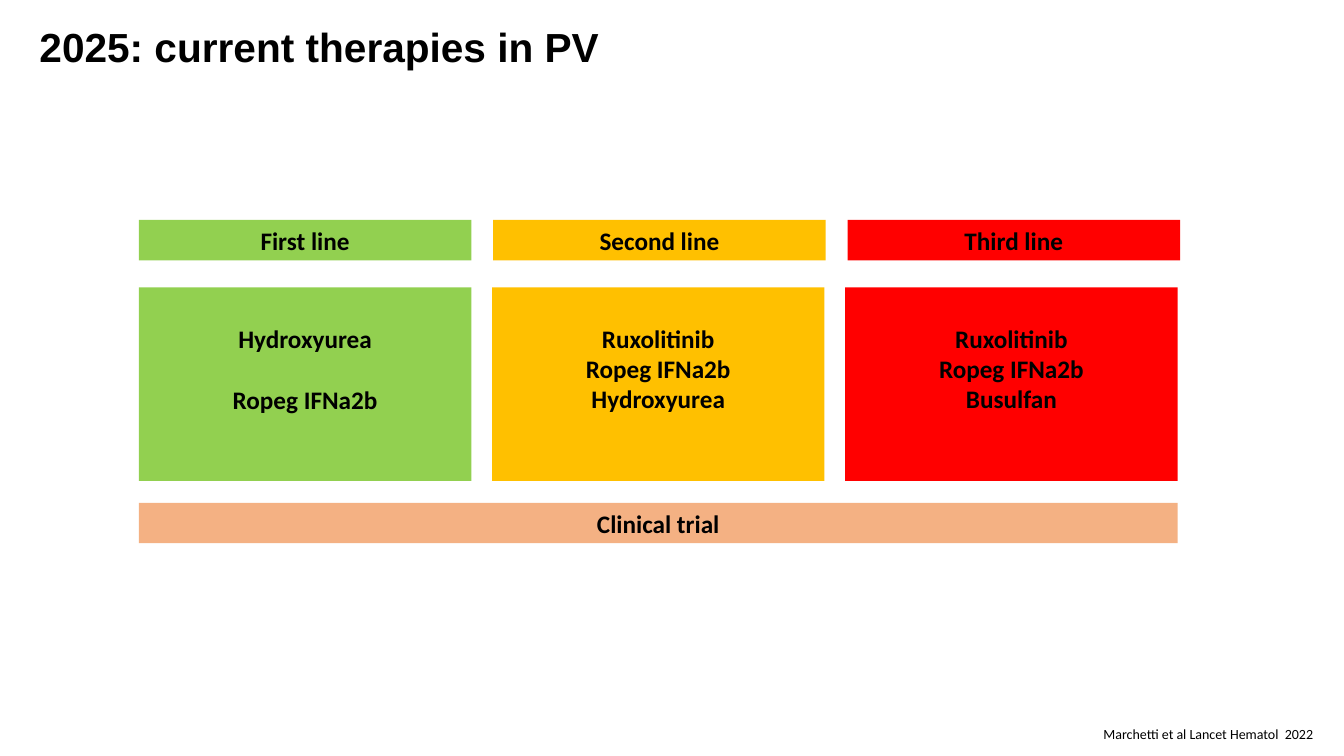
import pptx
import pptx.util
import pptx.dml.color
import pptx.enum.shapes
import pptx.enum.text

Cm, Pt = pptx.util.Cm, pptx.util.Pt
ALIGN = pptx.enum.text.PP_ALIGN
ANCHOR = pptx.enum.text.MSO_ANCHOR

# Content
TITLE = "2025: current therapies in PV"
THERAPY_LINES = [  # heading, colour, drugs, points between drugs
    ("First line", "92D050", ["Hydroxyurea", "Ropeg IFNa2b"], 22),
    ("Second line", "FFC000", ["Ruxolitinib", "Ropeg IFNa2b", "Hydroxyurea"], 0),
    ("Third line", "FF0000", ["Ruxolitinib", "Ropeg IFNa2b", "Busulfan"], 0),
]
TRIAL = ("Clinical trial", "F4B183")
CITATION = "Marchetti et al Lancet Hematol  2022"

# Layout in cm
LEFT, COLUMN_WIDTH = 3.5, 8.38
HEADING_PITCH, DRUGS_PITCH = 8.93, 8.9
HEADING_TOP, DRUGS_TOP, TRIAL_TOP = 5.54, 7.24, 12.67
BAR_HEIGHT, DRUGS_HEIGHT = 1.02, 4.88
BAR_INSET, DRUGS_INSET = 0.13, 0.9


def rgb(colour):
    return pptx.dml.color.RGBColor.from_string(colour)


def format_font(paragraph, size, name="Calibri", bold=False):
    for run in paragraph.runs:
        run.font.name = name
        run.font.size = Pt(size)
        run.font.bold = bold
        run.font.color.rgb = rgb("000000")


def add_block(left, top, width, height, colour, lines, inset=BAR_INSET, gap=0):
    block = slide.shapes.add_shape(
        pptx.enum.shapes.MSO_SHAPE.RECTANGLE, Cm(left), Cm(top), Cm(width), Cm(height))
    block.shadow.inherit = False
    block.fill.solid()
    block.fill.fore_color.rgb = rgb(colour)
    block.line.fill.background()
    frame = block.text_frame
    frame.word_wrap = True
    frame.vertical_anchor = ANCHOR.TOP
    frame.margin_top = Cm(inset)
    frame.text = "\n".join(lines)
    for index, paragraph in enumerate(frame.paragraphs):
        paragraph.alignment = ALIGN.CENTER
        if index and gap:
            paragraph.space_before = Pt(gap)
        format_font(paragraph, 18, bold=True)


deck = pptx.Presentation()
deck.slide_width, deck.slide_height = Cm(33.87), Cm(19.05)
slide = deck.slides.add_slide(deck.slide_layouts[5])

# Title
title = slide.shapes.title
title.left, title.top, title.width, title.height = Cm(0.74), Cm(0.56), Cm(30.48), Cm(1.37)
title.fill.solid()
title.fill.fore_color.rgb = rgb("FFFFFF")
title.text_frame.text = TITLE
title.text_frame.vertical_anchor = ANCHOR.MIDDLE
title.text_frame.auto_size = pptx.enum.text.MSO_AUTO_SIZE.NONE
heading = title.text_frame.paragraphs[0]
heading.alignment = ALIGN.LEFT
heading.line_spacing = 0.9
format_font(heading, 29, "Arial", bold=True)

# Therapy columns
for column, (name, colour, drugs, gap) in enumerate(THERAPY_LINES):
    add_block(LEFT + column * HEADING_PITCH, HEADING_TOP, COLUMN_WIDTH, BAR_HEIGHT,
              colour, [name])
    add_block(LEFT + column * DRUGS_PITCH, DRUGS_TOP, COLUMN_WIDTH, DRUGS_HEIGHT,
              colour, drugs, DRUGS_INSET, gap)

# Trial bar across all columns
trial_name, trial_colour = TRIAL
trial_width = (len(THERAPY_LINES) - 1) * DRUGS_PITCH + COLUMN_WIDTH
add_block(LEFT, TRIAL_TOP, trial_width, BAR_HEIGHT, trial_colour, [trial_name])

# Citation
citation = slide.shapes.add_textbox(Cm(27.56), Cm(18.16), Cm(6.17), Cm(0.69))
citation.text_frame.word_wrap = False
citation.text_frame.text = CITATION
format_font(citation.text_frame.paragraphs[0], 10)

deck.save("out.pptx")
